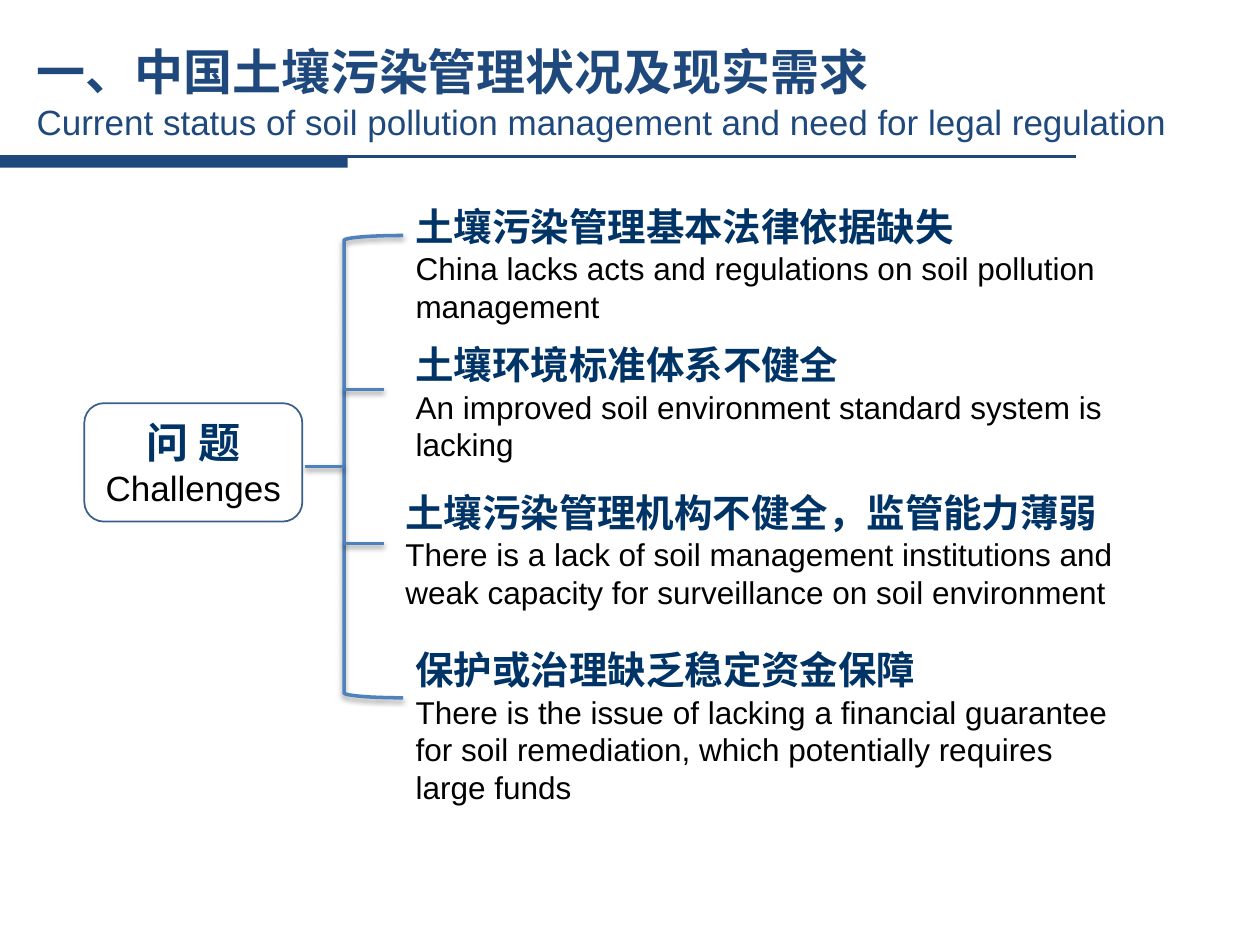
from dataclasses import dataclass

from lxml import etree
from pptx import Presentation
from pptx.dml.color import RGBColor
from pptx.enum.shapes import MSO_CONNECTOR, MSO_SHAPE
from pptx.enum.text import MSO_ANCHOR, MSO_AUTO_SIZE, PP_ALIGN
from pptx.oxml.ns import qn
from pptx.util import Pt

LINE = MSO_CONNECTOR.STRAIGHT
RECT, ROUND = MSO_SHAPE.RECTANGLE, MSO_SHAPE.ROUNDED_RECTANGLE
BRACKET = MSO_SHAPE.LEFT_BRACKET
MIDDLE, GROW = MSO_ANCHOR.MIDDLE, MSO_AUTO_SIZE.SHAPE_TO_FIT_TEXT
LEFT, CENTER = PP_ALIGN.LEFT, PP_ALIGN.CENTER

COLORS = {
    "head": "1F497D",
    "navy": "003366",
    "text": "000000",
    "tree": "4F81BD",
    "edge": "3A5F8C",
    "white": "FFFFFF",
}


@dataclass
class Issue:
    left: float
    top: float
    width: float
    height: float
    chinese: str
    english: str
    joined: bool = False  # both languages in one paragraph


ISSUES = [
    Issue(230.4, 112.3, 410.4, 79.9, "土壤污染管理基本法律依据缺失",
          "China lacks acts and regulations on soil pollution management"),
    Issue(230.4, 191.5, 416.2, 77.8, "土壤环境标准体系不健全",
          "An improved soil environment standard system is lacking"),
    Issue(224.6, 275.8, 427.7, 77.8, "土壤污染管理机构不健全，监管能力薄弱",
          "There is a lack of soil management institutions and "
          "weak capacity for surveillance on soil environment", True),
    Issue(230.4, 365.8, 416.2, 99.4, "保护或治理缺乏稳定资金保障",
          "There is the issue of lacking a financial guarantee for soil "
          "remediation, which potentially requires large funds"),
]

SPINE, TOP, TALL = 196.6, 134.6, 264.2
TICK = 23


def color(name: str) -> RGBColor:
    return RGBColor.from_string(COLORS[name])


def add_run(para, text: str, size: float, font: str, tint: str, bold: bool) -> None:
    run = para.add_run()
    run.text = text
    run.font.size = Pt(size)
    run.font.name = font
    run.font.bold = bold
    run.font.color.rgb = color(tint)


def add_pair(frame, chinese: str, english: str, sizes: tuple[float, float],
             tints: tuple[str, str], align=LEFT, joined: bool = False) -> None:
    """Write a bold Chinese line with its English wording below."""
    frame.word_wrap = True
    para = frame.paragraphs[0]
    para.alignment = align
    add_run(para, chinese, sizes[0], "Calibri", tints[0], True)
    if joined:
        para.add_line_break()
    else:
        para = frame.add_paragraph()
        para.alignment = align
        para.space_before = Pt(0)
    add_run(para, english, sizes[1], "Arial", tints[1], False)


def set_shadow(shape, soft: bool) -> None:
    """Replace the theme shadow by a soft drop shadow or by none."""
    effects = etree.SubElement(shape._element.spPr, qn("a:effectLst"))
    if soft:
        drop = etree.SubElement(effects, qn("a:outerShdw"), blurRad=str(Pt(3.1)),
                                dist=str(Pt(1.6)), dir="5400000", rotWithShape="0")
        tint = etree.SubElement(drop, qn("a:srgbClr"), val=COLORS["text"])
        etree.SubElement(tint, qn("a:alpha"), val="38000")


def add_line(slide, left: float, right: float, y: float, tint: str,
             weight: float, soft: bool) -> None:
    line = slide.shapes.add_connector(LINE, Pt(left), Pt(y), Pt(right), Pt(y))
    line.line.color.rgb = color(tint)
    line.line.width = Pt(weight)
    set_shadow(line, soft)


def add_header(slide) -> None:
    add_line(slide, 0, 614.9, 89.3, "head", 1.5, False)
    bar = slide.shapes.add_shape(RECT, Pt(0), Pt(90), Pt(198.7), Pt(5.8))
    bar.shadow.inherit = False
    bar.fill.solid()
    bar.fill.fore_color.rgb = color("head")
    bar.line.fill.background()

    title = slide.shapes.title
    title.left, title.top = Pt(13.7), Pt(15.1)
    title.width, title.height = Pt(689), Pt(74.9)
    frame = title.text_frame
    frame.auto_size = MSO_AUTO_SIZE.NONE
    frame.vertical_anchor = MIDDLE
    add_pair(frame, "一、中国土壤污染管理状况及现实需求",
             "Current status of soil pollution management and need for legal regulation",
             (28, 20), ("head", "head"))


def add_issue(slide, item: Issue) -> None:
    box = slide.shapes.add_textbox(Pt(item.left), Pt(item.top),
                                   Pt(item.width), Pt(item.height))
    add_pair(box.text_frame, item.chinese, item.english, (22, 18),
             ("navy", "text"), joined=item.joined)
    box.text_frame.auto_size = GROW


def add_tree(slide) -> None:
    brace = slide.shapes.add_shape(BRACKET, Pt(SPINE), Pt(TOP), Pt(33.8), Pt(TALL))
    brace.fill.background()
    brace.line.color.rgb = color("tree")
    brace.line.width = Pt(2)
    set_shadow(brace, True)
    for part in (1 / 3, 2 / 3):
        add_line(slide, SPINE, SPINE + TICK, TOP + TALL * part, "tree", 2, True)
    add_line(slide, 174.2, SPINE, TOP + TALL / 2, "tree", 2, True)


def add_root(slide) -> None:
    root = slide.shapes.add_shape(ROUND, Pt(48.2), Pt(230.4), Pt(124.6), Pt(67.7))
    root.shadow.inherit = False
    root.fill.solid()
    root.fill.fore_color.rgb = color("white")
    root.line.color.rgb = color("edge")
    root.line.width = Pt(1)
    root.text_frame.vertical_anchor = MIDDLE
    add_pair(root.text_frame, "问 题", "Challenges", (24, 20),
             ("navy", "text"), CENTER)


def main() -> None:
    deck = Presentation()
    deck.slide_width, deck.slide_height = Pt(720), Pt(540)
    slide = deck.slides.add_slide(deck.slide_layouts[5])
    add_header(slide)
    for item in ISSUES:
        add_issue(slide, item)
    add_tree(slide)
    add_root(slide)
    deck.save("out.pptx")


if __name__ == "__main__":
    main()
